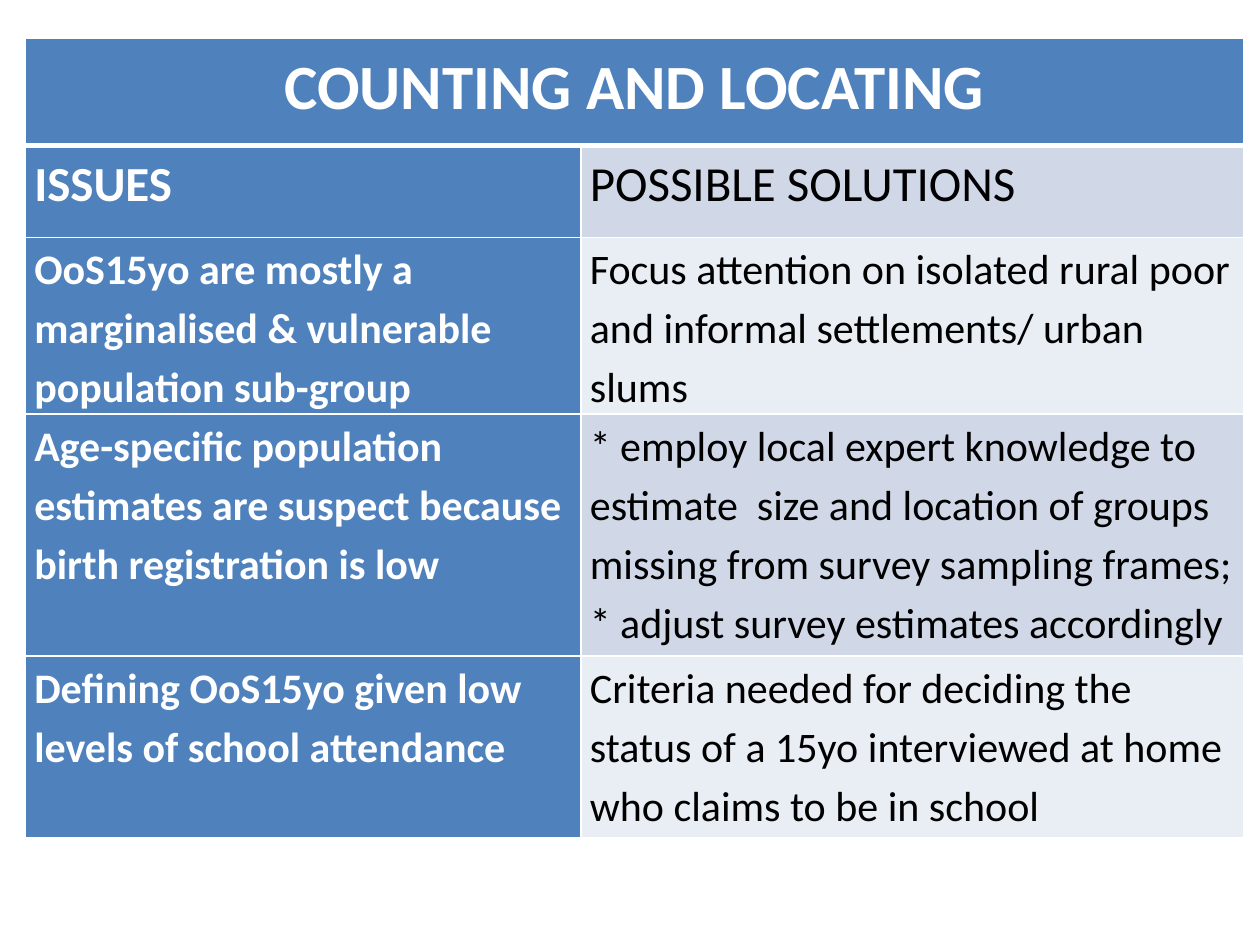
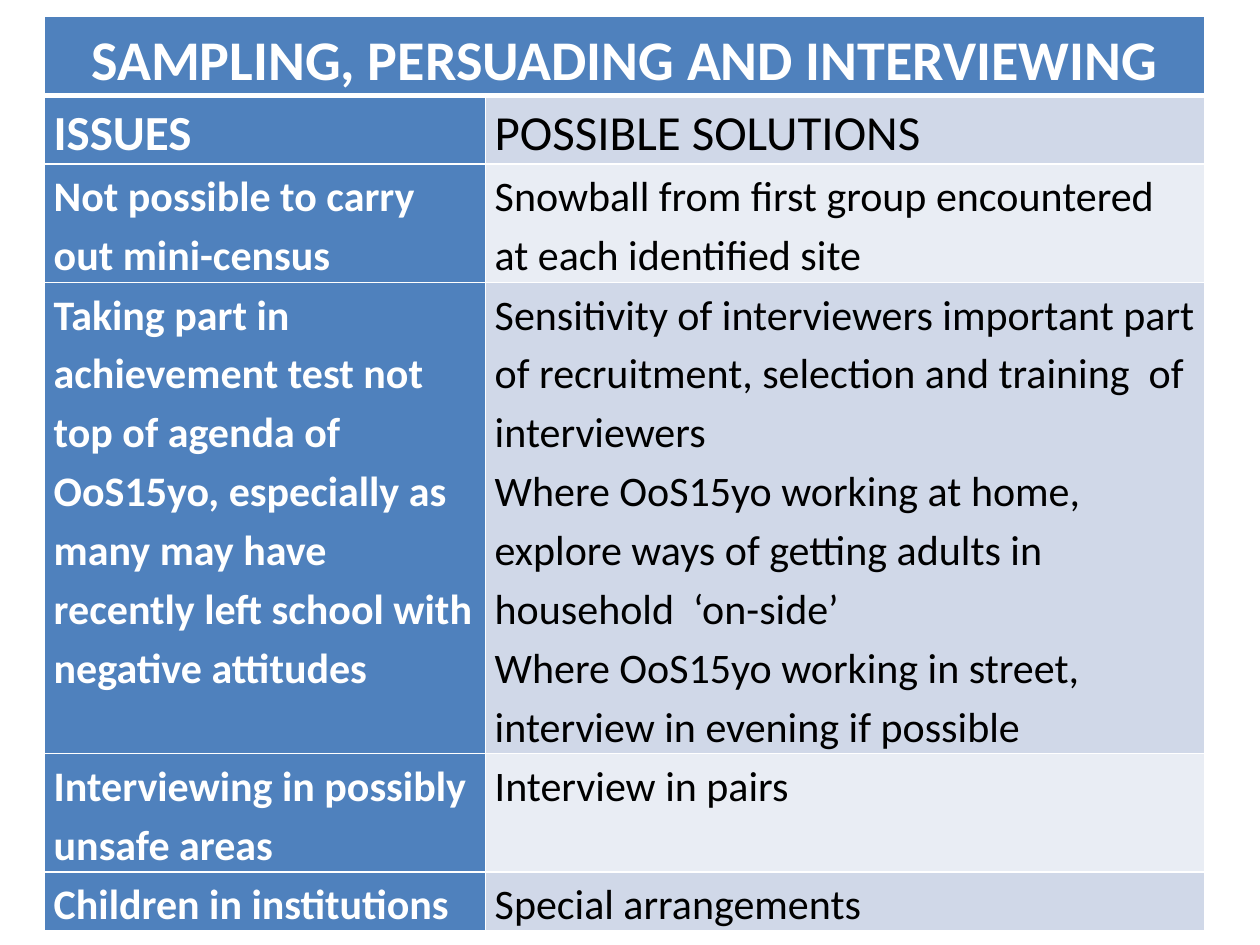
"""Build two slides, each an issues-and-solutions table under a banner."""
from dataclasses import dataclass

from lxml import etree
from pptx import Presentation
from pptx.dml.color import RGBColor
from pptx.enum import text
from pptx.oxml import ns
from pptx.util import Length, Pt


@dataclass(frozen=True)
class Theme:
    font: str = "Calibri"
    accent: RGBColor = RGBColor(0x4F, 0x81, 0xBD)
    band_dark: RGBColor = RGBColor(0xD0, 0xD8, 0xE8)
    band_light: RGBColor = RGBColor(0xE9, 0xED, 0xF4)
    light: RGBColor = RGBColor(0xFF, 0xFF, 0xFF)
    dark: RGBColor = RGBColor(0, 0, 0)
    heading: Length = Pt(28)
    body: Length = Pt(24)
    spacing: float = 1.15
    inset: Length = Pt(5.2)
    rule: Length = Pt(1)
    banner_rule: Length = Pt(3)


@dataclass(frozen=True)
class Row:
    height: float
    issue: str
    solutions: tuple[str, ...]


@dataclass(frozen=True)
class IssueTable:
    title: str
    title_size: float
    left: float
    top: float
    widths: tuple[float, float]
    banner_height: float
    heading_height: float
    rows: tuple[Row, ...]


THEME = Theme()

TABLES = (
    IssueTable(
        "COUNTING AND LOCATING", 36, 14.4, 21.9, (317.5, 378.7), 61.2, 52.5,
        (
            Row(100, "OoS15yo are mostly a marginalised & vulnerable population sub-group",
                ("Focus attention on isolated rural poor and informal settlements/ urban slums",)),
            Row(138.2, "Age-specific population estimates are suspect because birth registration is low",
                ("* employ local expert knowledge to estimate  size and location of groups "
                 "missing from survey sampling frames; * adjust survey estimates accordingly",)),
            Row(103.7, "Defining OoS15yo given low levels of school attendance",
                ("Criteria needed for deciding the status of a 15yo interviewed at home "
                 "who claims to be in school",)),
        ),
    ),
    IssueTable(
        "SAMPLING, PERSUADING AND INTERVIEWING", 32, 25.5, 9.4, (252, 411.1), 41.8, 36,
        (
            Row(67.7, "Not possible to carry out mini-census",
                ("Snowball from first group encountered at each identified site",)),
            Row(207.4, "Taking part in achievement test not top of agenda of OoS15yo, "
                "especially as many may have recently left school with negative attitudes",
                ("Sensitivity of interviewers important part of recruitment, selection "
                 "and training  of interviewers",
                 "Where OoS15yo working at home, explore ways of getting adults in "
                 "household  ‘on-side’",
                 "Where OoS15yo working in street, interview in evening if possible")),
            Row(67.7, "Interviewing in possibly unsafe areas", ("Interview in pairs",)),
            Row(33.1, "Children in institutions", ("Special arrangements",)),
        ),
    ),
)


def set_borders(cell, top: Length, bottom: Length) -> None:
    """Draw light rules on the four sides of a cell."""
    tc_pr = cell._tc.get_or_add_tcPr()
    for side, width in (("L", THEME.rule), ("R", THEME.rule), ("T", top), ("B", bottom)):
        ln = etree.SubElement(tc_pr, ns.qn(f"a:ln{side}"), w=str(int(width)))
        fill = etree.SubElement(ln, ns.qn("a:solidFill"))
        etree.SubElement(fill, ns.qn("a:srgbClr"), val=str(THEME.light))


def fill_cell(cell, lines: tuple[str, ...], size: Length, fill: RGBColor,
              emphasis: bool, centred: bool = False) -> None:
    """Write the paragraphs of a cell and colour its background."""
    cell.margin_left = cell.margin_right = THEME.inset
    cell.margin_top = cell.margin_bottom = Pt(0)
    cell.fill.solid()
    cell.fill.fore_color.rgb = fill
    tf = cell.text_frame
    for i, line in enumerate(lines):
        p = tf.add_paragraph() if i else tf.paragraphs[0]
        p.line_spacing = THEME.spacing
        p.alignment = text.PP_ALIGN.CENTER if centred else text.PP_ALIGN.LEFT
        r = p.add_run()
        r.text = line
        r.font.name = THEME.font
        r.font.size = size
        r.font.bold = emphasis
        r.font.color.rgb = THEME.light if emphasis else THEME.dark


def add_issue_table(s, spec: IssueTable) -> None:
    """Add the banner, heading row and issue rows as one table."""
    rows = (Row(spec.heading_height, "ISSUES", ("POSSIBLE SOLUTIONS",)), *spec.rows)
    heights = [spec.banner_height, *(row.height for row in rows)]
    tbl = s.shapes.add_table(len(heights), len(spec.widths), Pt(spec.left), Pt(spec.top),
                             Pt(sum(spec.widths)), Pt(sum(heights))).table
    for column, width in zip(tbl.columns, spec.widths):
        column.width = Pt(width)
    for i, height in enumerate(heights):
        tbl.rows[i].height = Pt(height)
        for cell in tbl.rows[i].cells:
            set_borders(cell, THEME.banner_rule if i == 1 else THEME.rule,
                        THEME.banner_rule if i == 0 else THEME.rule)

    banner = tbl.cell(0, 0)
    banner.merge(tbl.cell(0, 1))
    fill_cell(banner, (spec.title,), Pt(spec.title_size), THEME.accent, True, True)
    for i, row in enumerate(rows, start=1):
        size = THEME.heading if i == 1 else THEME.body
        band = THEME.band_dark if i % 2 else THEME.band_light
        fill_cell(tbl.cell(i, 0), (row.issue,), size, THEME.accent, True)
        fill_cell(tbl.cell(i, 1), row.solutions, size, band, False)


def main() -> None:
    """Build and save the presentation."""
    prs = Presentation()
    prs.slide_width, prs.slide_height = Pt(720), Pt(540)
    blank = prs.slide_layouts.get_by_name("Blank")
    for spec in TABLES:
        add_issue_table(prs.slides.add_slide(blank), spec)
    prs.save("out.pptx")


if __name__ == "__main__":
    main()
